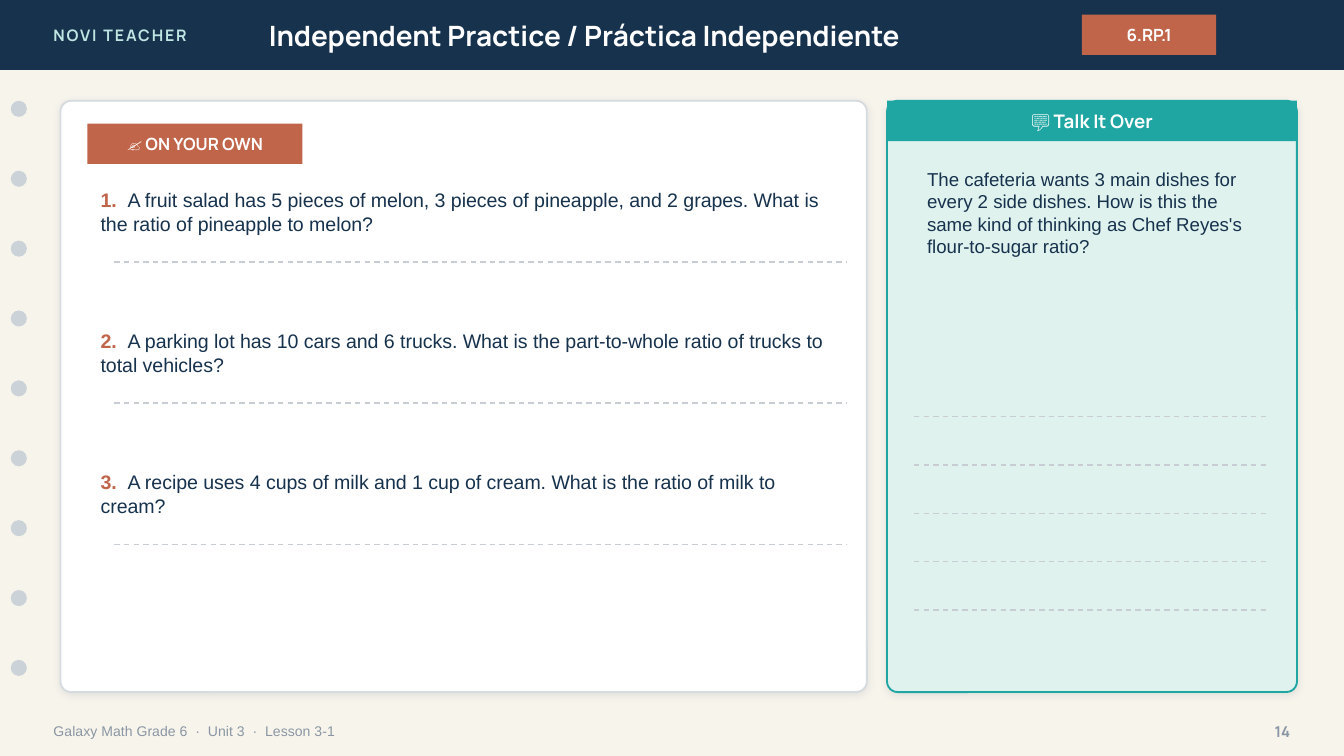
from dataclasses import dataclass

from lxml.etree import SubElement
from pptx import Presentation
from pptx.dml.color import RGBColor
from pptx.enum.dml import MSO_LINE
from pptx.enum.shapes import MSO_CONNECTOR, MSO_SHAPE
from pptx.enum.text import MSO_ANCHOR, MSO_AUTO_SIZE, PP_ALIGN
from pptx.oxml.ns import qn
from pptx.util import Pt

CREAM = RGBColor(0xF7, 0xF4, 0xEC)
NAVY = RGBColor(0x17, 0x32, 0x4D)
WHITE = RGBColor(0xFF, 0xFF, 0xFF)
MINT = RGBColor(0xBF, 0xE6, 0xE2)
PALE_MINT = RGBColor(0xDF, 0xF2, 0xEE)
TEAL = RGBColor(0x1F, 0xA6, 0xA2)
RUST = RGBColor(0xC0, 0x65, 0x4A)
HOLE_GREY = RGBColor(0xCB, 0xD3, 0xD9)
BORDER_GREY = RGBColor(0xD6, 0xDB, 0xDF)
RULE_GREY = RGBColor(0xC7, 0xCD, 0xD2)
FOOTER_GREY = RGBColor(0x8A, 0x96, 0xA3)
SHADOW = "1C2E42"

HEADING_FONT = "Manrope"
BODY_FONT = "Arial"

HEADER_HEIGHT = 37.44
CARD_TOP, CARD_HEIGHT = 54, 316.8
LABEL_HEIGHT = 21.6
HOLE_COUNT, HOLE_SIZE, HOLE_STEP = 9, 8.64, 37.44
QUESTION_TOP, QUESTION_STEP, ANSWER_OFFSET = 97.2, 75.6, 43.2
TALK_RULE_TOP, TALK_RULE_STEP, TALK_RULE_COUNT = 223.2, 25.92, 5


@dataclass(frozen=True)
class Area:
    left: float
    top: float
    width: float
    height: float

    def lengths(self):
        return Pt(self.left), Pt(self.top), Pt(self.width), Pt(self.height)


@dataclass(frozen=True)
class Card:
    area: Area
    fill: RGBColor
    border: RGBColor
    rounding: float


QUESTIONS = [
    "A fruit salad has 5 pieces of melon, 3 pieces of pineapple, and 2 grapes. "
    "What is the ratio of pineapple to melon?",
    "A parking lot has 10 cars and 6 trucks. "
    "What is the part-to-whole ratio of trucks to total vehicles?",
    "A recipe uses 4 cups of milk and 1 cup of cream. What is the ratio of milk to cream?",
]
PRACTICE_CARD = Card(Area(32.4, CARD_TOP, 432, CARD_HEIGHT), WHITE, BORDER_GREY, 0.018)
TALK_CARD = Card(Area(475.2, CARD_TOP, 219.6, CARD_HEIGHT), PALE_MINT, TEAL, 0.026)


def add_span(para, text: str, *, size: float, color: RGBColor, font: str = HEADING_FONT,
             bold: bool = True, spacing: float = 0) -> None:
    span = para.add_run()
    span.text = text
    span.font.size = Pt(size)
    span.font.name = font
    span.font.bold = bold
    span.font.color.rgb = color
    if spacing:
        span._r.get_or_add_rPr().set("spc", str(round(spacing * 100)))


def prepare_frame(shape, anchor=MSO_ANCHOR.MIDDLE, align=PP_ALIGN.LEFT):
    """Set wrapping and alignment, and return the first paragraph."""
    frame = shape.text_frame
    frame.word_wrap = True
    frame.auto_size = MSO_AUTO_SIZE.NONE
    frame.vertical_anchor = anchor
    para = frame.paragraphs[0]
    para.alignment = align
    return para


def add_text(page, area: Area, text: str, *, anchor=MSO_ANCHOR.MIDDLE,
             align=PP_ALIGN.LEFT, **style) -> None:
    box = page.shapes.add_textbox(*area.lengths())
    add_span(prepare_frame(box, anchor, align), text, **style)


def add_block(page, area: Area, fill: RGBColor, kind=MSO_SHAPE.RECTANGLE):
    block = page.shapes.add_shape(kind, *area.lengths())
    block.shadow.inherit = False
    block.fill.solid()
    block.fill.fore_color.rgb = fill
    block.line.fill.background()
    return block


def add_label(page, area: Area, text: str, fill: RGBColor, size: float) -> None:
    label = add_block(page, area, fill)
    add_span(prepare_frame(label, align=PP_ALIGN.CENTER), text, size=size, color=WHITE)


def add_card(page, card: Card) -> None:
    """Draw a rounded panel with a faint shadow below it."""
    panel = add_block(page, card.area, card.fill, MSO_SHAPE.ROUNDED_RECTANGLE)
    panel.adjustments[0] = card.rounding
    panel.line.color.rgb = card.border
    panel.line.width = Pt(1)
    effects = panel._element.spPr.find(qn("a:effectLst"))
    shadow = SubElement(effects, qn("a:outerShdw"), blurRad=str(Pt(4)), dist=str(Pt(1)),
                        dir="5400000", algn="bl", rotWithShape="0")
    color = SubElement(shadow, qn("a:srgbClr"), val=SHADOW)
    SubElement(color, qn("a:alpha"), val="10000")


def add_writing_rule(page, left: float, right: float, y: float) -> None:
    rule = page.shapes.add_connector(MSO_CONNECTOR.STRAIGHT, Pt(left), Pt(y), Pt(right), Pt(y))
    rule.line.color.rgb = RULE_GREY
    rule.line.width = Pt(0.75)
    rule.line.dash_style = MSO_LINE.DASH
    SubElement(rule._element.spPr, qn("a:effectLst"))


def add_header(page) -> None:
    bar = add_block(page, Area(0, 0, 720, HEADER_HEIGHT), NAVY)
    title = page.shapes.title
    title._element.addprevious(bar._element)
    title.left, title.top, title.width, title.height = Area(
        136.8, 0, 403.2, HEADER_HEIGHT).lengths()
    add_span(prepare_frame(title), "Independent Practice / Práctica Independiente",
             size=15, color=WHITE)
    add_text(page, Area(21.6, 0, 172.8, HEADER_HEIGHT), "NOVI TEACHER",
             size=8.5, color=MINT, spacing=1)
    add_label(page, Area(579.6, 7.92, 72, LABEL_HEIGHT), "6.RP.1", RUST, 9)


def add_binder_holes(page) -> None:
    for index in range(HOLE_COUNT):
        area = Area(5.76, CARD_TOP + index * HOLE_STEP, HOLE_SIZE, HOLE_SIZE)
        add_block(page, area, HOLE_GREY, MSO_SHAPE.OVAL)


def add_footer(page) -> None:
    add_text(page, Area(21.6, 381.6, 504, 20.16), "Galaxy Math Grade 6  ·  Unit 3  ·  Lesson 3-1",
             size=7.5, color=FOOTER_GREY, font=BODY_FONT, bold=False)
    add_text(page, Area(662.4, 381.6, 36, 20.16), "14", align=PP_ALIGN.RIGHT,
             size=8, color=FOOTER_GREY)


def add_practice(page) -> None:
    add_card(page, PRACTICE_CARD)
    add_label(page, Area(46.8, 66.24, 115.2, LABEL_HEIGHT), "✍️ ON YOUR OWN", RUST, 9)
    for index, question in enumerate(QUESTIONS):
        top = QUESTION_TOP + index * QUESTION_STEP
        box = page.shapes.add_textbox(*Area(46.8, top, 406.8, 36).lengths())
        para = prepare_frame(box, MSO_ANCHOR.TOP)
        add_span(para, f"{index + 1}.  ", size=10.5, color=RUST, font=BODY_FONT)
        add_span(para, question, size=10.5, color=NAVY, font=BODY_FONT, bold=False)
        add_writing_rule(page, 61.2, 453.6, top + ANSWER_OFFSET)


def add_talk(page) -> None:
    add_card(page, TALK_CARD)
    area = TALK_CARD.area
    add_label(page, Area(area.left, area.top, area.width, LABEL_HEIGHT),
              "💬 Talk It Over", TEAL, 10)
    add_text(page, Area(489.6, 86.4, 194.4, 122.4),
             "The cafeteria wants 3 main dishes for every 2 side dishes. How is this the same "
             "kind of thinking as Chef Reyes's flour-to-sugar ratio?",
             anchor=MSO_ANCHOR.TOP, size=10, color=NAVY, font=BODY_FONT, bold=False)
    for index in range(TALK_RULE_COUNT):
        add_writing_rule(page, 489.6, 680.4, TALK_RULE_TOP + index * TALK_RULE_STEP)


def main() -> None:
    deck = Presentation()
    deck.slide_width, deck.slide_height = Pt(720), Pt(405)
    page = deck.slides.add_slide(deck.slide_layouts[5])
    page.background.fill.solid()
    page.background.fill.fore_color.rgb = CREAM
    add_header(page)
    add_binder_holes(page)
    add_footer(page)
    add_practice(page)
    add_talk(page)
    deck.save("out.pptx")


if __name__ == "__main__":
    main()
